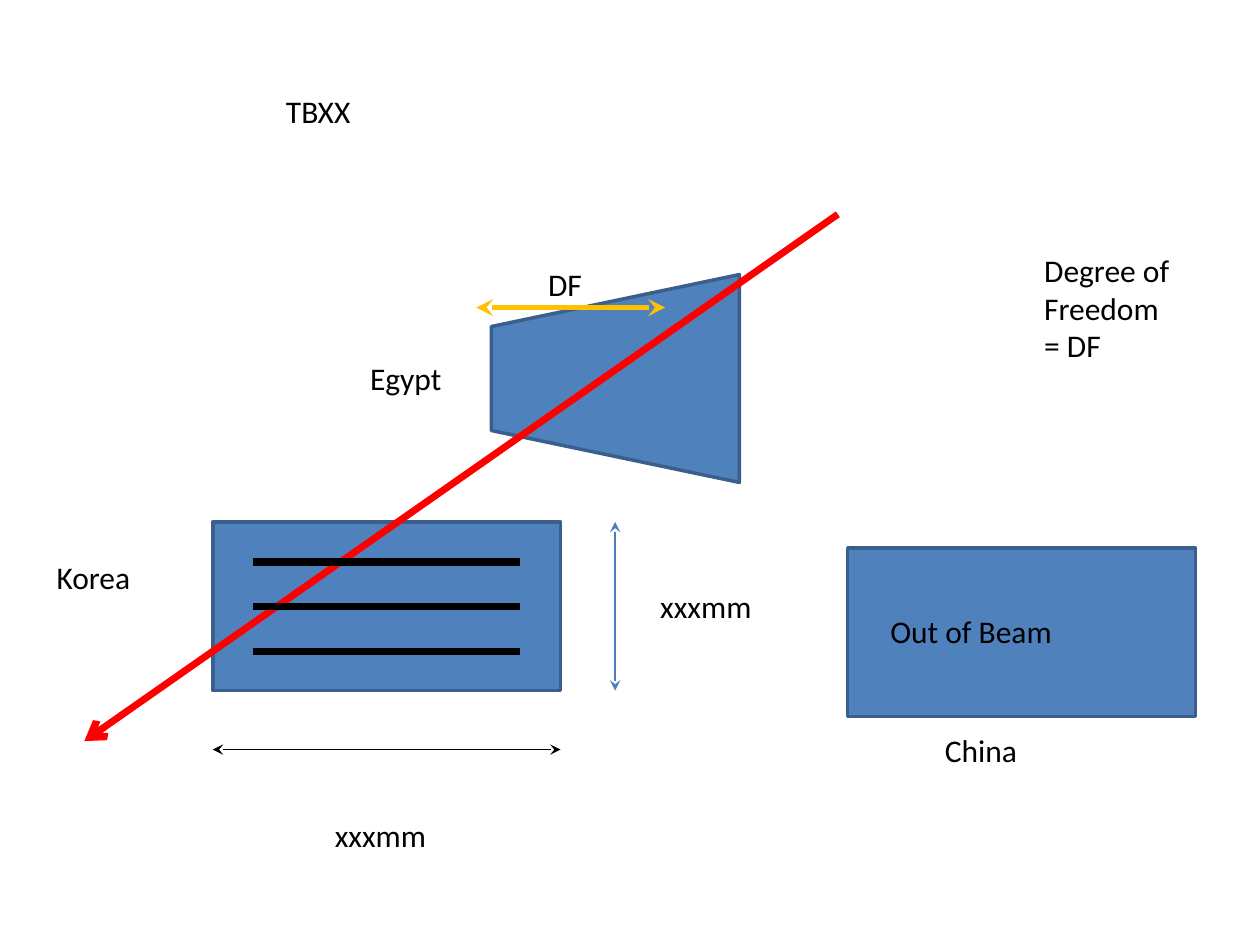
from lxml.etree import SubElement
from pptx import Presentation
from pptx.dml.color import RGBColor
from pptx.enum.shapes import MSO_CONNECTOR as Connector, MSO_SHAPE as Shape
from pptx.enum.text import MSO_ANCHOR as Anchor, MSO_AUTO_SIZE as AutoSize, PP_ALIGN as Align
from pptx.oxml.ns import qn
from pptx.util import Cm, Pt

COLORS = {
    "block": "4F81BD", "edge": "3A5F8C", "beam": "FF0000",
    "height": "4B7EBC", "freedom": "FFC000", "ink": "000000",
}


def write(box, text, size=18, font="Calibri", color="ink"):
    """Fill a text frame with left-aligned, top-anchored paragraphs."""
    frame = box.text_frame
    frame.word_wrap = True
    frame.auto_size = AutoSize.NONE
    frame.vertical_anchor = Anchor.TOP
    frame.text = text
    for paragraph in frame.paragraphs:
        paragraph.alignment = Align.LEFT
        paragraph.font.size = Pt(size)
        paragraph.font.name = font
        paragraph.font.color.rgb = RGBColor.from_string(COLORS[color])


def draw_line(x1, y1, x2, y2, color="ink", width=0.75, head=None, tail=None):
    """Draw a straight line in centimetres with optional arrowheads."""
    line = slide.shapes.add_connector(Connector.STRAIGHT, Cm(x1), Cm(y1), Cm(x2), Cm(y2))
    line.line.color.rgb = RGBColor.from_string(COLORS[color])
    line.line.width = Pt(width)
    outline = line.line._get_or_add_ln()
    for tag, arrow in (("a:headEnd", head), ("a:tailEnd", tail)):
        if arrow:
            SubElement(outline, qn(tag), type=arrow)
    SubElement(line._element.spPr, qn("a:effectLst"))


deck = Presentation()
deck.slide_width, deck.slide_height = Cm(25.4), Cm(19.05)
slide = deck.slides.add_slide(deck.slide_layouts[5])

# Title
title = slide.shapes.title
title.left, title.top, title.width, title.height = Cm(5.51), Cm(1.73), Cm(7.59), Cm(1.02)
write(title, "TBXX")

# Detectors: Korea, Egypt (turned on its side) and China
for kind, left, top, width, height, angle in (
    (Shape.RECTANGLE, 4.29, 10.52, 7.01, 3.4, 0),
    (Shape.TRAPEZOID, 10.31, 5.13, 4.19, 5, 270),
    (Shape.RECTANGLE, 17.09, 11.05, 7.01, 3.4, 0),
):
    detector = slide.shapes.add_shape(kind, Cm(left), Cm(top), Cm(width), Cm(height))
    detector.rotation = angle
    detector.shadow.inherit = False
    detector.fill.solid()
    detector.fill.fore_color.rgb = RGBColor.from_string(COLORS["block"])
    detector.line.color.rgb = RGBColor.from_string(COLORS["edge"])
    detector.line.width = Pt(2)

# Beam, then the layers inside Korea
draw_line(16.89, 4.32, 1.7, 14.94, color="beam", width=4, tail="arrow")
for layer in range(3):
    y = 11.33 + 0.9 * layer
    draw_line(5.11, y, 10.49, y, width=4.25)

# Dimension and degree-of-freedom arrows
both_ends = {"head": "stealth", "tail": "stealth"}
draw_line(4.29, 15.11, 11.3, 15.11, **both_ends)
draw_line(12.4, 10.52, 12.4, 13.92, color="height", **both_ends)
draw_line(9.6, 6.2, 13.41, 6.2, color="freedom", width=3.25, **both_ends)

# Labels
for text, left, top, width, height in (
    ("xxxmm", 6.5, 16.33, 2.79, 1.02),
    ("xxxmm", 13.06, 11.71, 2.79, 1.02),
    ("Out of Beam", 17.7, 12.22, 4.6, 1.02),
    ("Egypt", 7.21, 7.11, 2.39, 1.02),
    ("Korea", 0.89, 11.13, 2.39, 1.02),
    ("China", 18.8, 14.61, 2.39, 1.02),
    ("Degree of Freedom\n= DF", 20.8, 4.93, 3.71, 2.57),
    ("DF", 10.8, 5.21, 1.6, 1.02),
):
    label = slide.shapes.add_textbox(Cm(left), Cm(top), Cm(width), Cm(height))
    write(label, text)

deck.save("out.pptx")
